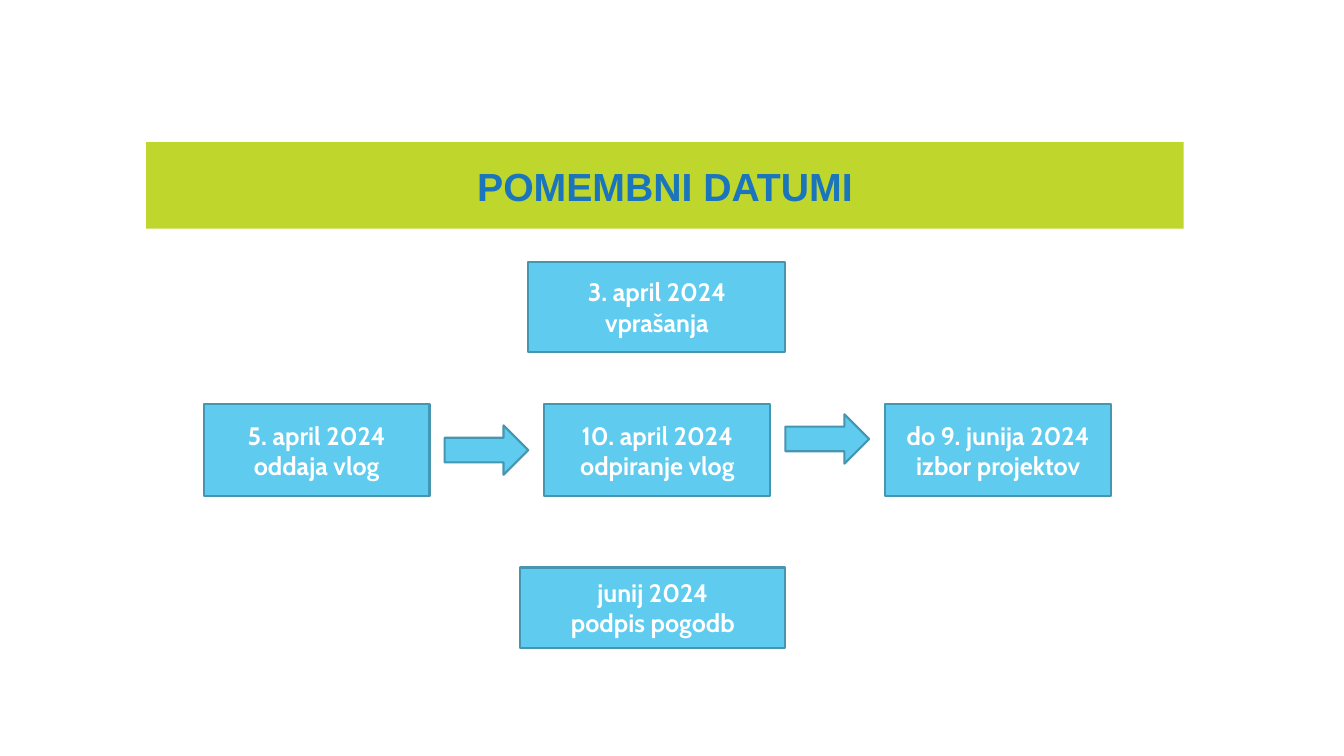
from dataclasses import dataclass

import pptx
import pptx.dml.color
import pptx.enum.shapes
import pptx.enum.text
import pptx.util

Inches = pptx.util.Inches
Pt = pptx.util.Pt
RGB = pptx.dml.color.RGBColor.from_string
SHAPES = pptx.enum.shapes.MSO_SHAPE


@dataclass(frozen=True)
class Theme:
    banner: str = "BFD72D"
    heading: str = "1B75BC"
    step: str = "5FCBEF"
    outline: str = "4696B1"
    step_text: str = "FFFFFF"
    heading_font: str = "Arial"
    step_font: str = "Cabin"
    heading_size: int = 28
    step_size: int = 18
    outline_width: float = 1.5


class DatesSlide:
    def __init__(self, slide, theme):
        self.slide = slide
        self.theme = theme

    def block(self, kind, bounds, fill, outline=None):
        block = self.slide.shapes.add_shape(kind, *map(Inches, bounds))
        block.shadow.inherit = False
        block.fill.solid()
        block.fill.fore_color.rgb = RGB(fill)
        if outline:
            block.line.color.rgb = RGB(outline)
            block.line.width = Pt(self.theme.outline_width)
        else:
            block.line.fill.background()
        return block

    def label(self, block, lines, font, size, color):
        frame = block.text_frame
        frame.word_wrap = True
        frame.vertical_anchor = pptx.enum.text.MSO_ANCHOR.MIDDLE
        for index, line in enumerate(lines):
            paragraph = frame.add_paragraph() if index else frame.paragraphs[0]
            paragraph.text = line
            paragraph.alignment = pptx.enum.text.PP_ALIGN.CENTER
            paragraph.font.name = font
            paragraph.font.size = Pt(size)
            paragraph.font.bold = True
            paragraph.font.color.rgb = RGB(color)

    def banner(self, bounds, heading):
        theme = self.theme
        block = self.block(SHAPES.RECTANGLE, bounds, theme.banner)
        self.label(block, [heading], theme.heading_font, theme.heading_size, theme.heading)

    def step(self, bounds, date, event):
        theme = self.theme
        block = self.block(SHAPES.RECTANGLE, bounds, theme.step, theme.outline)
        self.label(block, [date, event], theme.step_font, theme.step_size, theme.step_text)

    def arrow(self, left, top):
        self.block(SHAPES.RIGHT_ARROW, (left, top, 0.83, 0.49),
                   self.theme.step, self.theme.outline)


def main():
    deck = pptx.Presentation()
    deck.slide_width = Inches(13.33)
    deck.slide_height = Inches(7.5)
    dates = DatesSlide(deck.slides.add_slide(deck.slide_layouts[6]), Theme())

    # Heading
    dates.banner((1.45, 1.41, 10.29, 0.86), "POMEMBNI DATUMI")

    # Questions, above the main row
    dates.step((5.24, 2.6, 2.55, 0.89), "3. april 2024", "vprašanja")

    # Main row: submission, opening, selection
    row_left, row_pitch = 2.02, 3.38
    milestones = [
        ("5. april 2024", "oddaja vlog"),
        ("10. april 2024", "odpiranje vlog"),
        ("do 9. junija 2024", "izbor projektov"),
    ]
    for index, (date, event) in enumerate(milestones):
        dates.step((row_left + index * row_pitch, 4.01, 2.24, 0.91), date, event)

    # Arrows between the milestones
    for index, arrow_top in enumerate((4.22, 4.11)):
        dates.arrow(row_left + 2.39 + index * row_pitch, arrow_top)

    # Signing of contracts, below the main row
    dates.step((5.16, 5.63, 2.63, 0.8), "junij 2024", "podpis pogodb")

    deck.save("out.pptx")


if __name__ == "__main__":
    main()
